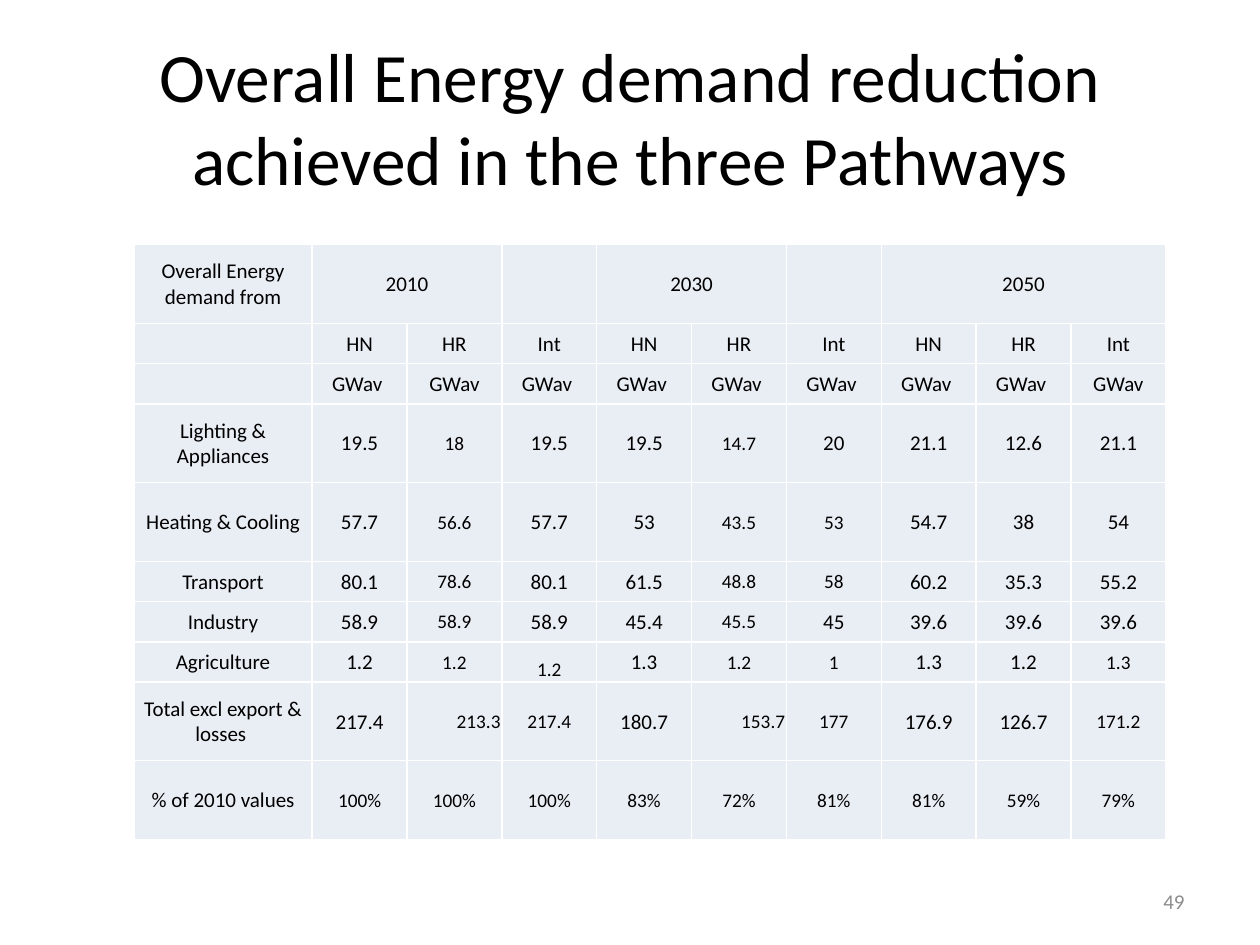
"""Build the slide comparing energy demand reduction in the three pathways."""
from dataclasses import dataclass

from lxml import etree
from pptx import Presentation
from pptx.dml.color import RGBColor
from pptx.enum.text import MSO_ANCHOR, PP_ALIGN
from pptx.oxml.ns import qn
from pptx.util import Pt

CENTER, RIGHT = PP_ALIGN.CENTER, PP_ALIGN.RIGHT
MIDDLE, BOTTOM = MSO_ANCHOR.MIDDLE, MSO_ANCHOR.BOTTOM
BLACK = RGBColor(0x00, 0x00, 0x00)
GREY = RGBColor(0x8C, 0x8C, 0x8C)
PALE_BLUE = RGBColor(0xE9, 0xED, 0xF4)
WHITE = RGBColor(0xFF, 0xFF, 0xFF)

TALL, SHORT = 45, 23
LABEL_WIDTH, VALUE_WIDTH = 101.8, 54.2
CELL_MARGINS = {
    "margin_left": Pt(0.7), "margin_right": Pt(0.7),
    "margin_top": Pt(0.7), "margin_bottom": Pt(0),
}


@dataclass(frozen=True)
class Caption:
    text: str
    left: float
    top: float
    width: float
    height: float
    size: float
    color: RGBColor
    align: PP_ALIGN


@dataclass(frozen=True)
class DemandRow:
    label: str
    values: tuple[str, ...]
    height: float
    small: tuple[int, ...] = ()


CAPTIONS = (
    Caption("Overall Energy demand reduction achieved in the three Pathways",
            36, 21.6, 648, 90, 39.6, BLACK, CENTER),
    Caption("49", 516, 500.5, 168, 28.75, 12, GREY, RIGHT),
)
ROWS = (
    DemandRow("Overall Energy demand from",
              ("2010", "", "", "2030", "", "", "2050", "", ""), TALL),
    DemandRow("", ("HN", "HR", "Int") * 3, SHORT),
    DemandRow("", ("GWav ", "GWav", *("GWav ",) * 6, "GWav"), SHORT),
    DemandRow("Lighting & Appliances",
              ("19.5", "18", "19.5", "19.5", "14.7", "20", "21.1", "12.6", "21.1"),
              TALL, (2, 5)),
    DemandRow("Heating & Cooling",
              ("57.7", "56.6", "57.7", "53", "43.5", "53", "54.7", "38", "54"),
              TALL, (2, 5, 6)),
    DemandRow("Transport",
              ("80.1", "78.6", "80.1", "61.5", "48.8", "58", "60.2", "35.3", "55.2"),
              SHORT, (2, 5, 6)),
    DemandRow("Industry",
              ("58.9", "58.9", "58.9", "45.4", "45.5", "45", "39.6", "39.6", "39.6"),
              SHORT, (2, 5)),
    DemandRow("Agriculture",
              ("1.2", "1.2", "1.2", "1.3", "1.2", "1", "1.3", "1.2", "1.3"),
              SHORT, (2, 3, 5, 6, 9)),
    DemandRow("Total excl export & losses ",
              ("217.4", "213.3", "217.4", "180.7", "153.7", "177", "176.9", "126.7", "171.2"),
              TALL, (2, 3, 5, 6, 9)),
    DemandRow("% of 2010 values",
              ("100%", "100%", "100%", "83%", "72%", "81%", "81%", "59%", "79%"),
              TALL, tuple(range(1, 10))),
)
YEAR_SPANS = ((1, 2), (4, 5), (7, 9))
RIGHT_ALIGNED = {(8, 2), (8, 5)}
BOTTOM_ANCHORED = {(7, 3)}


def write_text(frame, text: str, size: float, color: RGBColor, align: PP_ALIGN) -> None:
    """Put one formatted run into the first paragraph of a text frame."""
    paragraph = frame.paragraphs[0]
    paragraph.alignment = align
    run = paragraph.add_run()
    run.text = text
    for name, value in {"name": "Calibri", "size": Pt(size)}.items():
        setattr(run.font, name, value)
    run.font.color.rgb = color


def add_caption(slide, caption: Caption) -> None:
    """Add a wrapped, vertically centred text box."""
    box = slide.shapes.add_textbox(
        Pt(caption.left), Pt(caption.top), Pt(caption.width), Pt(caption.height))
    frame = box.text_frame
    frame.word_wrap = True
    frame.vertical_anchor = MIDDLE
    write_text(frame, caption.text, caption.size, caption.color, caption.align)


def add_borders(cell) -> None:
    """Draw thin white lines on all four sides of a cell."""
    properties = cell._tc.get_or_add_tcPr()
    for position, side in enumerate(("a:lnL", "a:lnR", "a:lnT", "a:lnB")):
        line = etree.Element(qn(side), w=str(Pt(1)))
        fill = etree.SubElement(line, qn("a:solidFill"))
        etree.SubElement(fill, qn("a:srgbClr"), val=str(WHITE))
        properties.insert(position, line)


def add_demand_table(slide, rows: tuple[DemandRow, ...]) -> None:
    """Add the table of demand by sector, year and pathway."""
    value_count = len(rows[0].values)
    width = LABEL_WIDTH + VALUE_WIDTH * value_count
    height = sum(row.height for row in rows)
    table = slide.shapes.add_table(
        len(rows), value_count + 1, Pt(76.6), Pt(139.8), Pt(width), Pt(height)).table
    for index, column in enumerate(table.columns):
        column.width = Pt(VALUE_WIDTH if index else LABEL_WIDTH)
    for r, row in enumerate(rows):
        table.rows[r].height = Pt(row.height)
        for c, text in enumerate((row.label, *row.values)):
            cell = table.cell(r, c)
            anchor = BOTTOM if (r, c) in BOTTOM_ANCHORED else MIDDLE
            for name, value in {**CELL_MARGINS, "vertical_anchor": anchor}.items():
                setattr(cell, name, value)
            cell.fill.solid()
            cell.fill.fore_color.rgb = PALE_BLUE
            add_borders(cell)
            if text:
                align = RIGHT if (r, c) in RIGHT_ALIGNED else CENTER
                size = 11 if c in row.small else 12
                write_text(cell.text_frame, text, size, BLACK, align)
    for first, last in YEAR_SPANS:
        table.cell(0, first).merge(table.cell(0, last))


def main() -> None:
    """Create and save the presentation."""
    presentation = Presentation()
    presentation.slide_width, presentation.slide_height = Pt(720), Pt(540)
    slide = presentation.slides.add_slide(presentation.slide_layouts[6])
    for caption in CAPTIONS:
        add_caption(slide, caption)
    add_demand_table(slide, ROWS)
    presentation.save("out.pptx")


if __name__ == "__main__":
    main()
